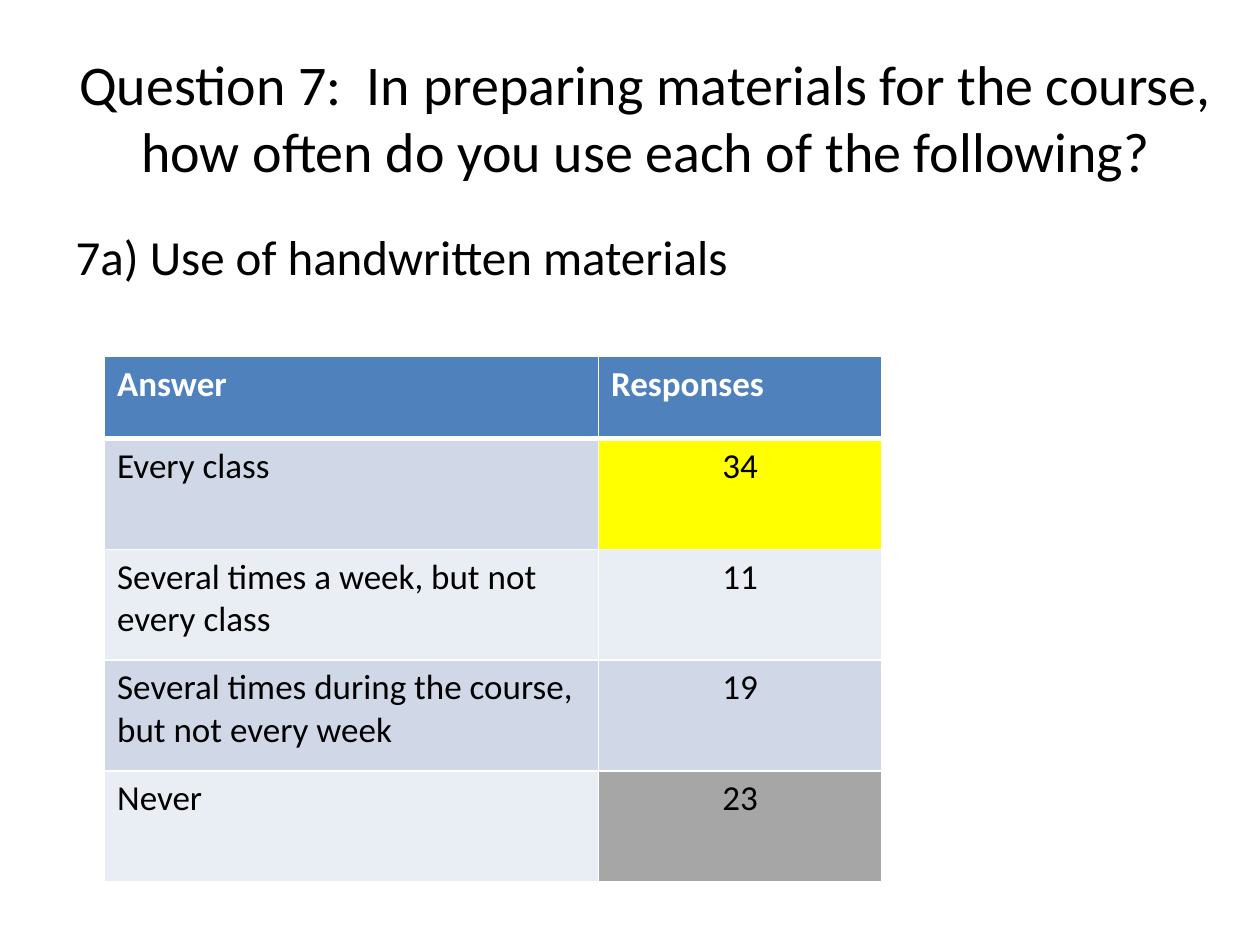
from dataclasses import dataclass

from lxml import etree
from pptx import Presentation
from pptx.dml.color import RGBColor
from pptx.enum.text import MSO_ANCHOR, MSO_AUTO_SIZE, PP_ALIGN
from pptx.oxml.ns import qn
from pptx.util import Inches, Pt

LEFT, CENTER = PP_ALIGN.LEFT, PP_ALIGN.CENTER
MIDDLE, TOP = MSO_ANCHOR.MIDDLE, MSO_ANCHOR.TOP
NO_FIT = MSO_AUTO_SIZE.NONE


@dataclass(frozen=True)
class Theme:
    font: str = "Calibri"
    title_size: int = 32
    body_size: int = 28
    table_size: int = 20
    text: str = "000000"
    white: str = "FFFFFF"
    header: str = "4F81BD"
    bands: tuple = ("D0D8E8", "E9EDF4")
    most: str = "FFFF00"
    never: str = "A6A6A6"
    thin: int = 1
    thick: int = 3


class SlideBuilder:
    def __init__(self, slide, theme):
        self.slide = slide
        self.theme = theme

    def add_run(self, paragraph, text, size, color, bold=False):
        run = paragraph.add_run()
        run.text = text
        run.font.name = self.theme.font
        run.font.size = Pt(size)
        run.font.bold = bold
        run.font.color.rgb = RGBColor.from_string(color)

    def place(self, placeholder, box, anchor):
        placeholder.left, placeholder.top, placeholder.width, placeholder.height = map(Inches, box)
        frame = placeholder.text_frame
        frame.word_wrap = True
        frame.auto_size = NO_FIT
        frame.vertical_anchor = anchor
        return frame.paragraphs[0]

    def title(self, text, box):
        heading = self.place(self.slide.shapes.title, box, MIDDLE)
        heading.alignment = CENTER
        self.add_run(heading, text, self.theme.title_size, self.theme.text)

    def body(self, text, box):
        item = self.place(self.slide.placeholders[1], box, TOP)
        # Hanging indent without a bullet
        properties = item._p.get_or_add_pPr()
        properties.set("marL", str(Inches(0.38)))
        properties.set("indent", str(-Inches(0.38)))
        etree.SubElement(properties, qn("a:buNone"))
        self.add_run(item, text, self.theme.body_size, self.theme.text)

    def borders(self, cell, top, bottom):
        thin = self.theme.thin
        properties = cell._tc.get_or_add_tcPr()
        for side, width in (("L", thin), ("R", thin), ("T", top), ("B", bottom)):
            line = etree.SubElement(properties, qn(f"a:ln{side}"), w=str(Pt(width)))
            fill = etree.SubElement(line, qn("a:solidFill"))
            etree.SubElement(fill, qn("a:srgbClr"), val=self.theme.white)

    def table(self, rows, origin, widths, heights, highlights):
        theme = self.theme
        table = self.slide.shapes.add_table(
            len(rows), len(widths), *map(Inches, (*origin, sum(widths), sum(heights)))
        ).table
        for column, width in zip(table.columns, widths):
            column.width = Inches(width)
        for r, (values, height) in enumerate(zip(rows, heights)):
            table.rows[r].height = Inches(height)
            is_header = r == 0
            row_fill = theme.header if is_header else theme.bands[(r - 1) % 2]
            for c, value in enumerate(values):
                cell = table.cell(r, c)
                # The rule under the header is the thick one
                self.borders(
                    cell,
                    top=theme.thick if r == 1 else theme.thin,
                    bottom=theme.thick if is_header else theme.thin,
                )
                cell.fill.solid()
                cell.fill.fore_color.rgb = RGBColor.from_string(highlights.get((r, c), row_fill))
                paragraph = cell.text_frame.paragraphs[0]
                paragraph.alignment = CENTER if c == 1 and not is_header else LEFT
                color = theme.white if is_header else theme.text
                self.add_run(paragraph, value, theme.table_size, color, bold=is_header)


def main():
    presentation = Presentation()
    presentation.slide_width, presentation.slide_height = Inches(10), Inches(7.5)
    theme = Theme()
    slide = presentation.slides.add_slide(presentation.slide_layouts[1])
    builder = SlideBuilder(slide, theme)

    # Question and sub-question
    builder.title(
        "Question 7:  In preparing materials for the course, "
        "how often do you use each of the following?",
        (0.5, 0.3, 9.25, 1.25),
    )
    builder.body("7a) Use of handwritten materials", (0.5, 1.75, 9, 4.33))

    # Response counts, with two answers highlighted
    responses = [
        ("Answer", "Responses"),
        ("Every class", "34"),
        ("Several times a week, but not every class", "11"),
        ("Several times during the course, but not every week", "19"),
        ("Never", "23"),
    ]
    builder.table(
        responses,
        origin=(0.83, 2.83),
        widths=(3.92, 2.25),
        heights=[0.65] + [0.88] * 4,
        highlights={(1, 1): theme.most, (4, 1): theme.never},
    )
    presentation.save("out.pptx")


if __name__ == "__main__":
    main()
